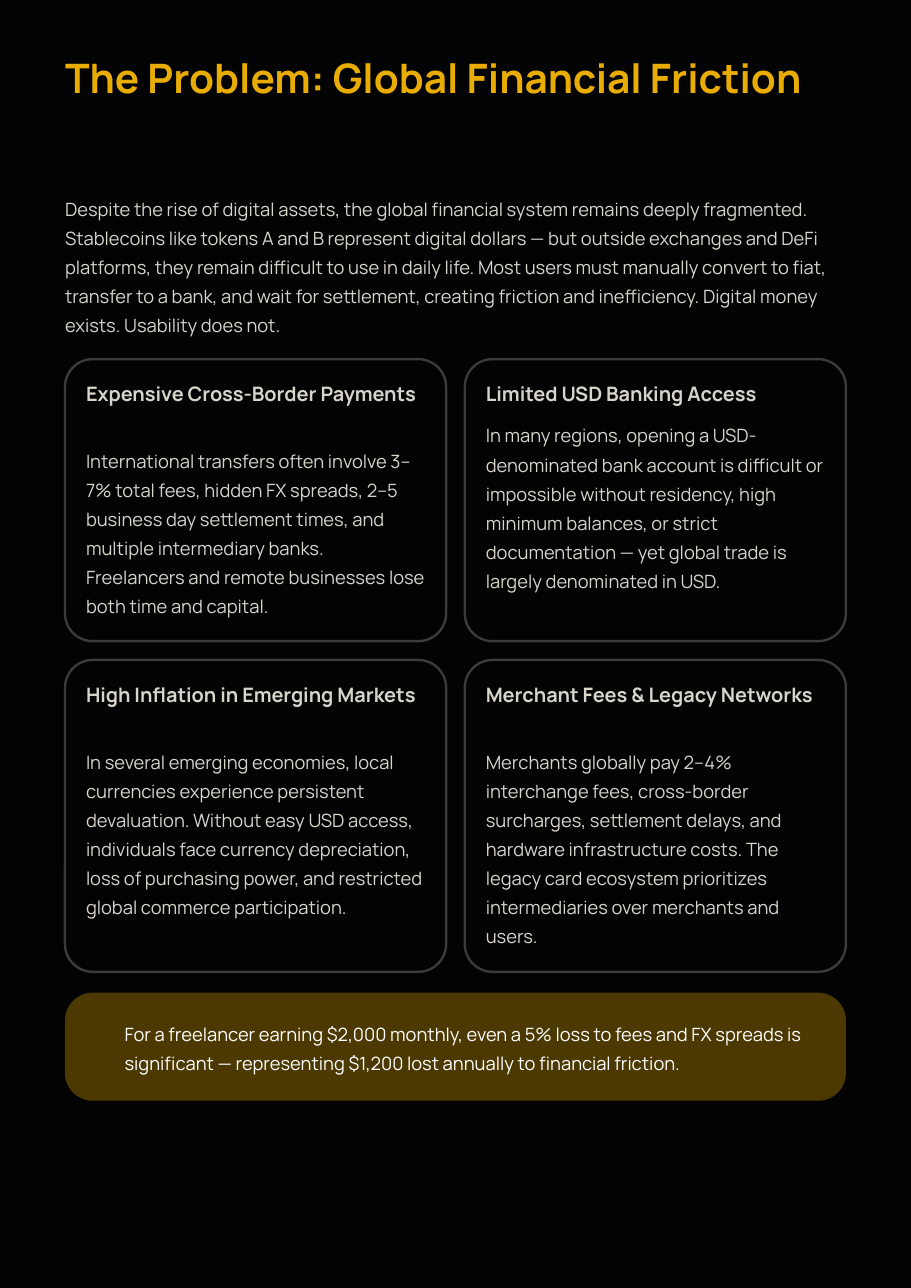
from lxml.etree import SubElement
from pptx import Presentation
from pptx.dml.color import RGBColor
from pptx.enum.shapes import MSO_SHAPE
from pptx.enum.text import MSO_ANCHOR, MSO_AUTO_SIZE, PP_ALIGN
from pptx.oxml.ns import qn
from pptx.util import Pt

NIGHT, GOLD, SAND, GREY, BROWN, WHITE = "030303", "E8AC03", "D7D4CC", "3B3B3B", "4C3801", "FFFFFF"

# Page grid, in points
MARGIN, CONTENT_WIDTH = 42.5, 510.4
CARD_WIDTH, CARD_GAP, CARD_PADDING = 249.1, 12.2, 13.7
CORNER_RADIUS = 18.1

# Text styles: font size, line spacing, bold, colour
TITLE_STYLE = (26.5, 33.5, True, GOLD)
HEADING_STYLE = (13, 16.5, True, SAND)
BODY_STYLE = (12, 19, False, SAND)
BANNER_STYLE = (12, 19, False, WHITE)

FRAME_FORMAT = {
    "margin_left": 0, "margin_top": 0, "margin_right": 0, "margin_bottom": 0,
    "word_wrap": True, "auto_size": MSO_AUTO_SIZE.NONE, "vertical_anchor": MSO_ANCHOR.TOP,
}

INTRO = (
    "Despite the rise of digital assets, the global financial system remains deeply fragmented. "
    "Stablecoins like tokens A and B represent digital dollars — but outside exchanges and DeFi "
    "platforms, they remain difficult to use in daily life. Most users must manually convert to "
    "fiat, transfer to a bank, and wait for settlement, creating friction and inefficiency. "
    "Digital money exists. Usability does not."
)

# Rows of cards: top, height, then (heading, distance from card top to body, body)
CARD_ROWS = [
    (234.7, 184.3, [
        ("Expensive Cross-Border Payments", 54.7,
         "International transfers often involve 3–7% total fees, hidden FX spreads, 2–5 business "
         "day settlement times, and multiple intermediary banks. Freelancers and remote "
         "businesses lose both time and capital."),
        ("Limited USD Banking Access", 38.2,
         "In many regions, opening a USD-denominated bank account is difficult or impossible "
         "without residency, high minimum balances, or strict documentation — yet global trade "
         "is largely denominated in USD."),
    ]),
    (431.3, 203.8, [
        ("High Inflation in Emerging Markets", 54.7,
         "In several emerging economies, local currencies experience persistent devaluation. "
         "Without easy USD access, individuals face currency depreciation, loss of purchasing "
         "power, and restricted global commerce participation."),
        ("Merchant Fees & Legacy Networks", 54.7,
         "Merchants globally pay 2–4% interchange fees, cross-border surcharges, settlement "
         "delays, and hardware infrastructure costs. The legacy card ecosystem prioritizes "
         "intermediaries over merchants and users."),
    ]),
]

BANNER = (
    "For a freelancer earning $2,000 monthly, even a 5% loss to fees and FX spreads is "
    "significant — representing $1,200 lost annually to financial friction."
)


def color(hex_value):
    return RGBColor.from_string(hex_value)


def set_attributes(target, values):
    for name, value in values.items():
        setattr(target, name, value)


def write_text(holder, text, style):
    size, spacing, bold, text_color = style
    frame = holder.text_frame
    set_attributes(frame, FRAME_FORMAT)
    paragraph = frame.paragraphs[0]
    set_attributes(paragraph, {
        "alignment": PP_ALIGN.LEFT, "line_spacing": Pt(spacing),
        "space_before": Pt(0), "space_after": Pt(0),
    })
    run = paragraph.add_run()
    run.text = text
    set_attributes(run.font, {"name": "Manrope", "size": Pt(size), "bold": bold})
    run.font.color.rgb = color(text_color)


def fill_placeholder(placeholder, left, top, width, height, text, style):
    set_attributes(placeholder, {
        "left": Pt(left), "top": Pt(top), "width": Pt(width), "height": Pt(height),
    })
    write_text(placeholder, text, style)


def add_text(slide, left, top, width, height, text, style):
    box = slide.shapes.add_textbox(Pt(left), Pt(top), Pt(width), Pt(height))
    write_text(box, text, style)


def add_panel(slide, left, top, width, height, fill, outline=None):
    panel = slide.shapes.add_shape(
        MSO_SHAPE.ROUNDED_RECTANGLE, Pt(left), Pt(top), Pt(width), Pt(height))
    panel.adjustments[0] = CORNER_RADIUS / height
    panel.shadow.inherit = False
    panel.fill.solid()
    panel.fill.fore_color.rgb = color(fill)
    if outline:
        panel.line.color.rgb = color(outline)
        panel.line.width = Pt(1.55)
    else:
        panel.line.fill.background()


def add_card(slide, left, top, height, heading, body_offset, body):
    add_panel(slide, left, top, CARD_WIDTH, height, NIGHT, GREY)
    text_left = left + CARD_PADDING
    text_width = CARD_WIDTH - 2 * CARD_PADDING
    add_text(slide, text_left, top + CARD_PADDING, text_width, 16.5, heading, HEADING_STYLE)
    body_height = height - body_offset - CARD_PADDING
    add_text(slide, text_left, top + body_offset, text_width, body_height, body, BODY_STYLE)


def main():
    deck = Presentation()
    deck.slide_width, deck.slide_height = Pt(595.4), Pt(841.7)
    slide = deck.slides.add_slide(deck.slide_layouts[1])
    slide.background.fill.solid()
    slide.background.fill.fore_color.rgb = color(NIGHT)

    # Title and introduction
    title, intro = slide.placeholders
    fill_placeholder(title, MARGIN, 33.1, CONTENT_WIDTH, 67,
                     "The Problem: Global Financial Friction", TITLE_STYLE)
    intro_properties = intro.text_frame.paragraphs[0]._p.get_or_add_pPr()
    intro_properties.set("marL", "0")
    intro_properties.set("indent", "0")
    SubElement(intro_properties, qn("a:buNone"))
    fill_placeholder(intro, MARGIN, 124.6, CONTENT_WIDTH, 96.5, INTRO, BODY_STYLE)

    # Problem cards
    for top, height, cards in CARD_ROWS:
        for column, (heading, body_offset, body) in enumerate(cards):
            left = MARGIN + column * (CARD_WIDTH + CARD_GAP)
            add_card(slide, left, top, height, heading, body_offset, body)

    # Example banner
    add_panel(slide, MARGIN, 648.7, CONTENT_WIDTH, 70.6, BROWN)
    add_text(slide, 81.4, 663.8, 459.4, 38.9, BANNER, BANNER_STYLE)

    deck.save("out.pptx")


if __name__ == "__main__":
    main()
